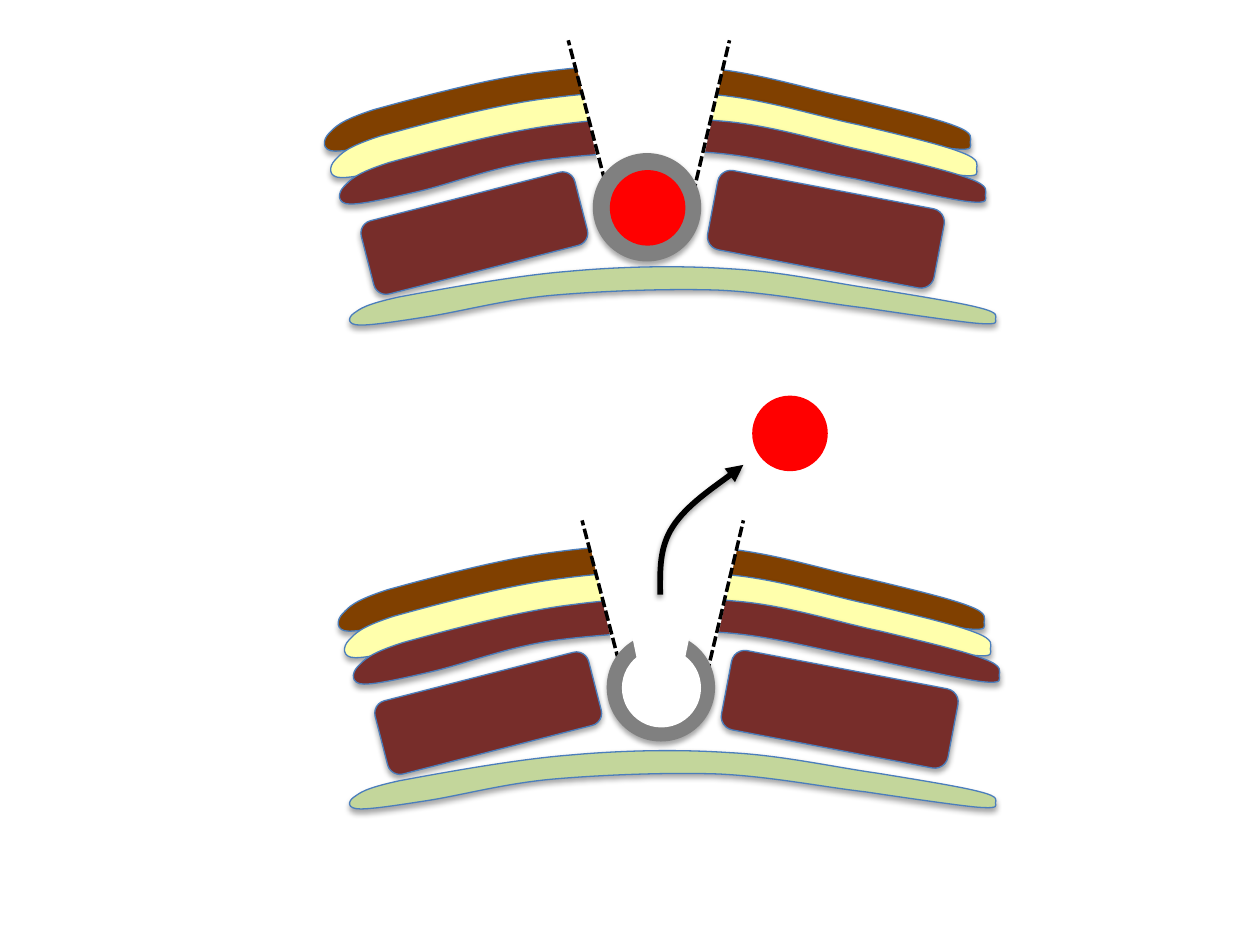
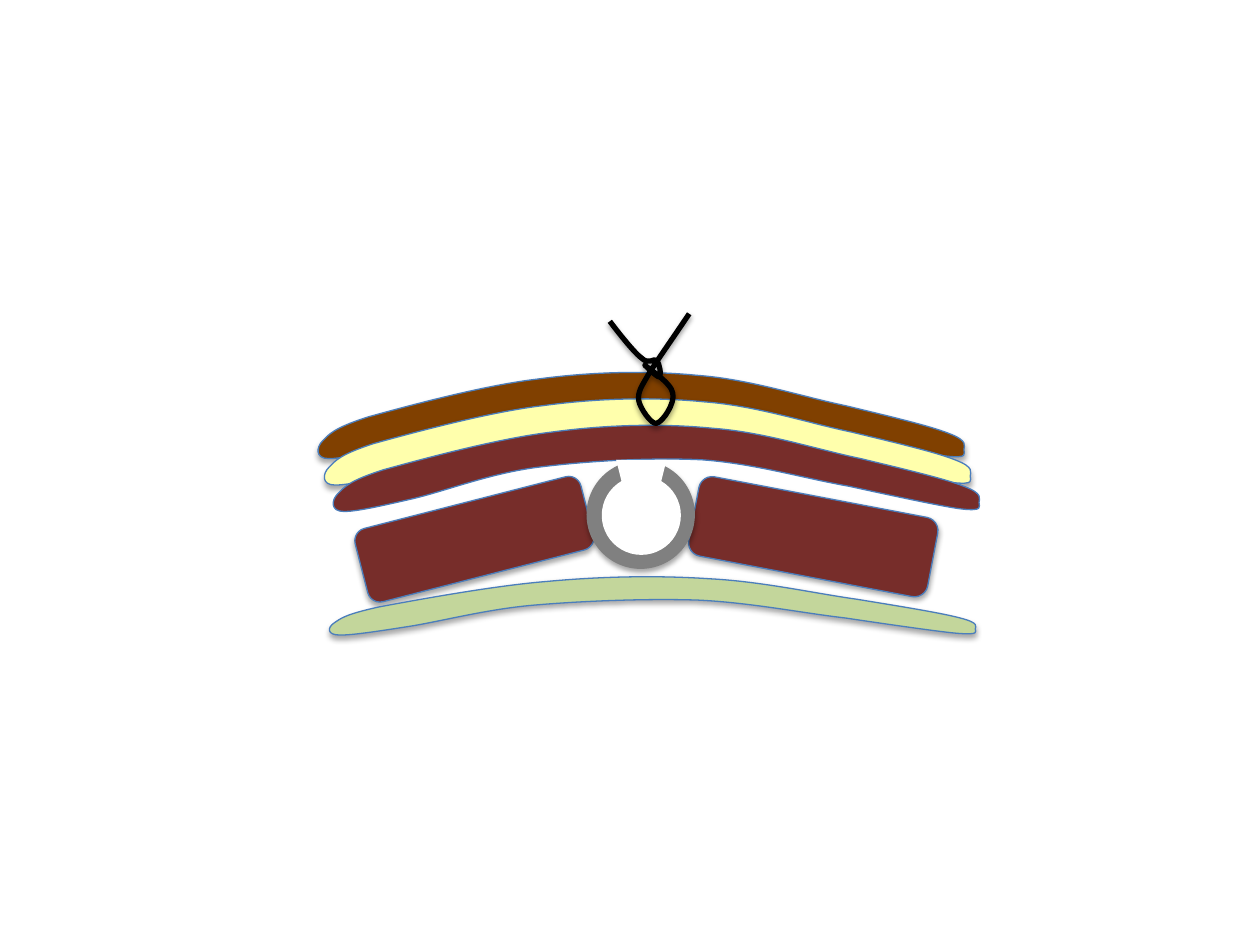
from dataclasses import dataclass

import pptx
import pptx.dml.color
import pptx.enum.dml
import pptx.enum.shapes
import pptx.oxml
import pptx.oxml.ns
import pptx.util

RGBColor = pptx.dml.color.RGBColor
Shape = pptx.enum.shapes.MSO_SHAPE
PX = 9144  # EMU in one px, 100 px to the inch

SKIN = RGBColor(0x80, 0x40, 0x00)
FAT = RGBColor(0xFF, 0xFF, 0xAC)
MUSCLE = RGBColor(0x77, 0x2D, 0x2A)
LINING = RGBColor(0xC3, 0xD6, 0x9B)
CAPSULE = RGBColor(0x80, 0x80, 0x80)
CORE = RGBColor(0xFF, 0x00, 0x00)
OUTLINE = RGBColor(0x4B, 0x7E, 0xBC)
BLACK = RGBColor(0x00, 0x00, 0x00)
WHITE = RGBColor(0xFF, 0xFF, 0xFF)

# Each curve is a start point followed by three points per Bezier segment.
Curve = list[tuple[int, int]]
LAYER_HEIGHT, LINING_HEIGHT = 68, 46
LAYER: Curve = [
    (4, 54), (9, 49), (12, 44), (40, 35), (69, 27), (131, 10), (174, 5),
    (218, -1), (262, -2), (302, 2), (343, 5), (385, 19), (419, 26),
    (452, 34), (486, 42), (501, 48), (517, 54), (513, 58), (513, 61),
    (513, 64), (517, 68), (499, 66), (482, 64), (410, 48), (410, 48),
    (375, 42), (335, 30), (293, 27), (252, 25), (201, 28), (162, 33),
    (124, 38), (89, 52), (63, 58), (37, 64), (19, 68), (9, 68),
    (-2, 68), (-1, 59), (4, 54),
]
REMOVAL_ARROW: Curve = [
    (524, 472), (524, 453), (523, 435), (534, 418), (545, 401), (579, 378), (590, 369),
]
SUTURE: Curve = [
    (547, 249), (535, 267), (523, 284), (516, 295), (509, 307), (506, 311), (507, 318),
    (508, 324), (517, 337), (521, 336), (526, 335), (536, 320), (534, 312),
    (533, 304), (514, 292), (512, 290), (510, 288), (522, 300), (523, 299),
    (525, 298), (524, 289), (521, 286), (519, 284), (515, 290), (509, 284),
    (502, 279), (484, 255), (484, 255),
]
RING_SIZE, CORE_SIZE = 85, 60


@dataclass
class Box:
    left: int
    top: int
    width: int
    height: int
    turn: float = 0


@dataclass
class Section:
    """A cut through the tissue; the other places are counted from left and top."""
    left: int
    top: int
    lining: tuple[int, int]
    muscles: tuple[Box, Box]
    incised: bool
    gap: Box | None = None

    def place(self, box: Box) -> Box:
        return Box(self.left + box.left, self.top + box.top, box.width, box.height, box.turn)


LAYERS = [(0, 0, SKIN), (5, 21, FAT), (12, 42, MUSCLE)]
OPEN_MUSCLES = (Box(307, 98, 183, 64, 10.8), Box(32, 103, 175, 60, 345.6))
CLOSED_MUSCLES = (Box(297, 98, 193, 64, 10.8), Box(32, 102, 185, 60, 345.6))
INCISION = Box(196, -20, 126, 143, 180)
INCISION_EDGES = [((293, 102), (322, -20)), ((226, 103), (194, -20))]
RING = Box(214, 70, RING_SIZE, RING_SIZE)

FILLED = Section(257, 52, (20, 160), OPEN_MUSCLES, True)
EMPTIED = Section(268, 433, (9, 163), OPEN_MUSCLES, True, Box(225, 30, 63, 76, 180))
CLOSED = Section(252, 296, (9, 162), CLOSED_MUSCLES, False, Box(237, 69, 40, 24, 180))


def set_line(shape, color: RGBColor, points: float) -> None:
    shape.line.color.rgb = color
    shape.line.width = pptx.util.Pt(points)


def add_shadow(shape, opacity: int = 35, distance: float = 1.8) -> None:
    shape.shadow.inherit = False
    effects = shape._element.spPr.find(pptx.oxml.ns.qn("a:effectLst"))
    effects.append(pptx.oxml.parse_xml(
        f'<a:outerShdw {pptx.oxml.ns.nsdecls("a")} blurRad="{pptx.util.Pt(3.1)}" '
        f'dist="{pptx.util.Pt(distance)}" dir="5400000" rotWithShape="0">'
        f'<a:srgbClr val="{BLACK}"><a:alpha val="{opacity * 1000}"/></a:srgbClr></a:outerShdw>'))


def add_solid(slide, kind, box: Box, fill: RGBColor):
    """Add a preset shape without line or shadow."""
    shape = slide.shapes.add_shape(
        kind, box.left * PX, box.top * PX, box.width * PX, box.height * PX)
    shape.rotation = box.turn
    shape.shadow.inherit = False
    shape.fill.solid()
    shape.fill.fore_color.rgb = fill
    shape.line.fill.background()
    return shape


def add_curve(slide, curve: Curve, left: int = 0, top: int = 0,
              y_scale: float = 1, closed: bool = False):
    """Build a freeform and turn every three line segments into one Bezier segment."""
    builder = slide.shapes.build_freeform(*curve[0], scale=(PX, PX * y_scale))
    builder.add_line_segments(curve[1:], close=closed)
    shape = builder.convert_to_shape(left * PX, top * PX)
    segments = list(shape._element.iter(pptx.oxml.ns.qn("a:lnTo")))
    for first, second, third in zip(segments[::3], segments[1::3], segments[2::3]):
        bezier = pptx.oxml.parse_xml(f'<a:cubicBezTo {pptx.oxml.ns.nsdecls("a")}/>')
        first.addprevious(bezier)
        for segment in (first, second, third):
            bezier.append(segment[0])
            segment.getparent().remove(segment)
    shape.shadow.inherit = False
    return shape


def add_layer(slide, left: int, top: int, color: RGBColor,
              height: int = LAYER_HEIGHT, shaded: bool = True) -> None:
    layer = add_curve(slide, LAYER, left, top, height / LAYER_HEIGHT, closed=True)
    layer.fill.solid()
    layer.fill.fore_color.rgb = color
    set_line(layer, OUTLINE, 0.75)
    if shaded:
        add_shadow(layer)


def add_stroke(slide, curve: Curve, points: float):
    stroke = add_curve(slide, curve)
    stroke.fill.background()
    set_line(stroke, BLACK, points)
    add_shadow(stroke, opacity=38, distance=1.6)
    return stroke


def add_incision(slide, section: Section) -> None:
    add_solid(slide, Shape.TRAPEZOID, section.place(INCISION), WHITE)
    for (x1, y1), (x2, y2) in INCISION_EDGES:
        edge = slide.shapes.add_connector(
            pptx.enum.shapes.MSO_CONNECTOR.STRAIGHT,
            (section.left + x1) * PX, (section.top + y1) * PX,
            (section.left + x2) * PX, (section.top + y2) * PX)
        set_line(edge, BLACK, 2)
        edge.line.dash_style = pptx.enum.dml.MSO_LINE.SQUARE_DOT
        edge._element.spPr.append(
            pptx.oxml.parse_xml(f'<a:effectLst {pptx.oxml.ns.nsdecls("a")}/>'))


def add_capsule(slide, section: Section) -> None:
    """Add the grey ring, with its red core or emptied and opened by a gap."""
    ring = section.place(RING)
    capsule = add_solid(slide, Shape.OVAL, ring, CAPSULE)
    set_line(capsule, CAPSULE, 0.75)
    add_shadow(capsule)
    inner = Box(ring.left + 13, ring.top + 13, CORE_SIZE, CORE_SIZE)
    if section.gap is None:
        add_solid(slide, Shape.OVAL, inner, CORE)
        return
    set_line(add_solid(slide, Shape.OVAL, inner, WHITE), WHITE, 2)
    add_solid(slide, Shape.TRAPEZOID, section.place(section.gap), WHITE)


def add_section(slide, section: Section) -> None:
    for dx, dy, color in LAYERS:
        shaded = section.incised or color != MUSCLE
        add_layer(slide, section.left + dx, section.top + dy, color, shaded=shaded)
    for muscle_box in section.muscles:
        muscle = add_solid(slide, Shape.ROUNDED_RECTANGLE, section.place(muscle_box), MUSCLE)
        set_line(muscle, OUTLINE, 0.75)
        add_shadow(muscle)
    if section.incised:
        add_incision(slide, section)
    add_capsule(slide, section)
    dx, dy = section.lining
    add_layer(slide, section.left + dx, section.top + dy, LINING, LINING_HEIGHT)


def build_removal(slide) -> None:
    add_section(slide, FILLED)
    add_section(slide, EMPTIED)
    add_solid(slide, Shape.OVAL, Box(597, 314, CORE_SIZE, CORE_SIZE), CORE)
    arrow = add_stroke(slide, REMOVAL_ARROW, 3.25)
    arrow.line._get_or_add_ln().append(
        pptx.oxml.parse_xml(f'<a:tailEnd {pptx.oxml.ns.nsdecls("a")} type="triangle"/>'))


def build_closure(slide) -> None:
    add_section(slide, CLOSED)
    add_stroke(slide, SUTURE, 3)


def main() -> None:
    deck = pptx.Presentation()
    deck.slide_width, deck.slide_height = 1000 * PX, 750 * PX
    blank = deck.slide_layouts[6]
    for build in (build_removal, build_closure):
        build(deck.slides.add_slide(blank))
    deck.save("out.pptx")


if __name__ == "__main__":
    main()
